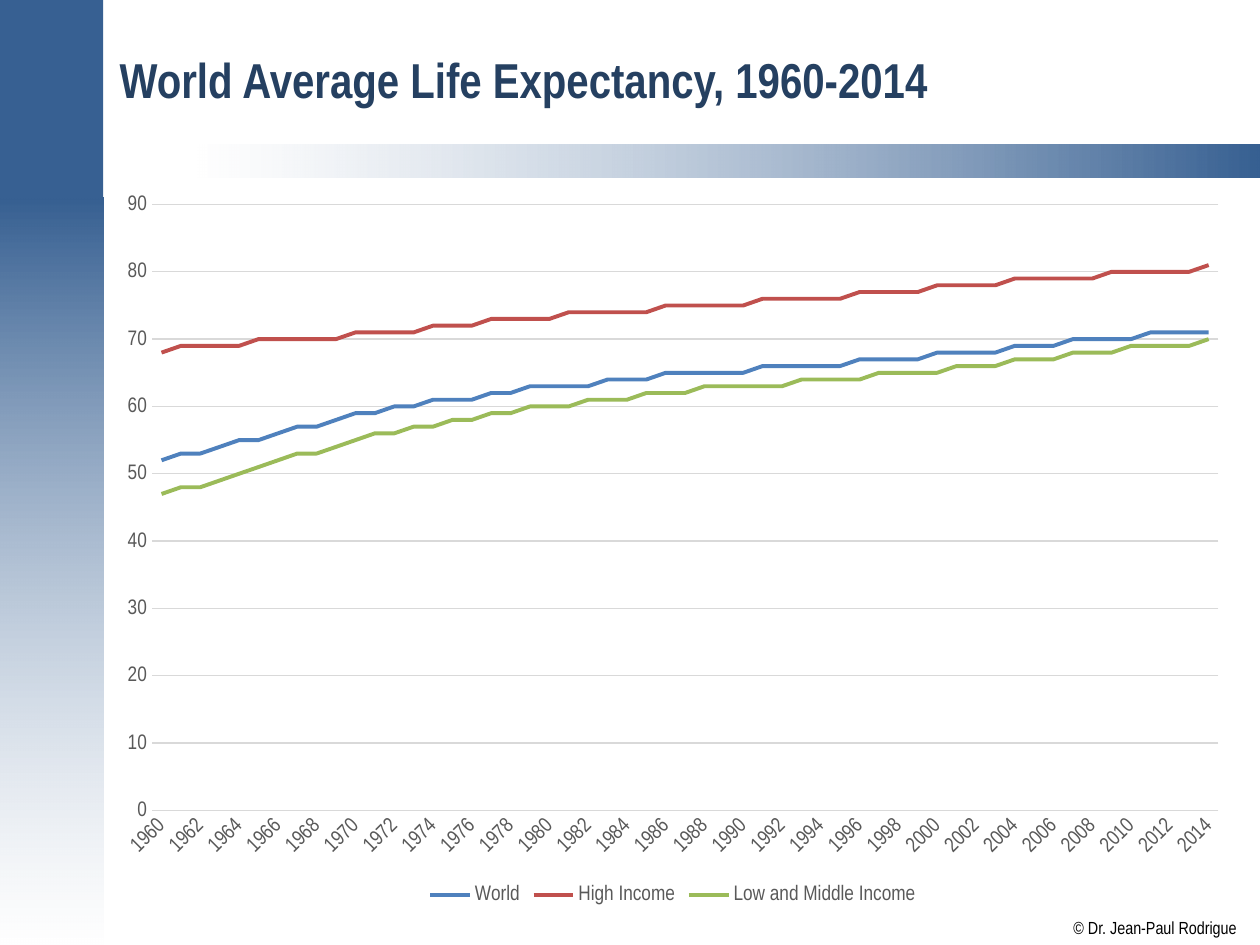
from lxml import etree
from pptx import Presentation
from pptx.chart.data import CategoryChartData
from pptx.dml.color import RGBColor
from pptx.enum.chart import XL_CHART_TYPE, XL_LEGEND_POSITION, XL_TICK_MARK
from pptx.enum.shapes import MSO_SHAPE
from pptx.enum.text import MSO_ANCHOR, MSO_AUTO_SIZE, PP_ALIGN
from pptx.oxml.ns import qn
from pptx.util import Cm, Pt

LINE = XL_CHART_TYPE.LINE
BOTTOM = XL_LEGEND_POSITION.BOTTOM
NO_TICK = XL_TICK_MARK.NONE
RECT = MSO_SHAPE.RECTANGLE
MIDDLE = MSO_ANCHOR.MIDDLE
NO_FIT = MSO_AUTO_SIZE.NONE
LEFT = PP_ALIGN.LEFT

BLUE, WHITE, GREY = "376092", "FFFFFF", "D9D9D9"
TITLE = {"name": "Arial Narrow", "size": Pt(28), "bold": True}
CREDIT = {"name": "Arial Narrow", "size": Pt(10), "bold": False}
LABEL = {"name": "Arial Narrow", "size": Pt(12), "bold": False}


def rgb(value):
    return RGBColor.from_string(value)


def set_font(font, style, color):
    for name, value in style.items():
        setattr(font, name, value)
    font.color.rgb = rgb(color)


prs = Presentation()
prs.slide_width, prs.slide_height = Cm(25.4), Cm(19.05)
s = prs.slides.add_slide(prs.slide_layouts[5])

# Side bar and fading bands: box, gradient angle (counter-clockwise), stops, white opacity
bands = [
    ((-0.03, 3.99, 2.11, 15.06), 270, (BLUE, WHITE), 51),
    ((3.99, 2.92, 21.41, 0.66), 0, (WHITE, BLUE), 50),
    ((-0.03, -0.03, 2.11, 4.02), None, (BLUE,), None),
]
for box, angle, colors, opacity in bands:
    sp = s.shapes.add_shape(RECT, *map(Cm, box))
    sp.shadow.inherit = False
    sp.line.fill.background()
    if angle is None:
        sp.fill.solid()
        sp.fill.fore_color.rgb = rgb(colors[0])
        continue
    sp.fill.gradient()
    sp.fill.gradient_angle = angle
    for stop, position, color in zip(sp.fill.gradient_stops, (0, 1), colors):
        stop.position = position
        stop.color.rgb = rgb(color)
    for clr in sp._element.iter(qn("a:srgbClr")):
        if clr.get("val") == WHITE:
            etree.SubElement(clr, qn("a:alpha"), val=str(opacity * 1000))

# Title
sp = s.shapes.title
sp.left, sp.top, sp.width, sp.height = map(Cm, (2.16, 0.28, 22.81, 2.64))
tf = sp.text_frame
tf.text = "World Average Life Expectancy, 1960-2014"
tf.auto_size = NO_FIT
tf.vertical_anchor = MIDDLE
p = tf.paragraphs[0]
p.alignment = LEFT
set_font(p.runs[0].font, TITLE, "254061")

# Copyright line
sp = s.shapes.add_textbox(Cm(21.64), Cm(18.49), Cm(3.3), Cm(0.43))
tf = sp.text_frame
tf.margin_left = tf.margin_top = tf.margin_right = tf.margin_bottom = 0
tf.word_wrap = False
r = tf.paragraphs[0].add_run()
r.text = "© Dr. Jean-Paul Rodrigue"
set_font(r.font, CREDIT, "000000")

# Life expectancy in years, one value per year
series = [
    ("World", "4F81BD", [
        52, 53, 53, 54, 55, 55, 56, 57, 57, 58,
        59, 59, 60, 60, 61, 61, 61, 62, 62, 63,
        63, 63, 63, 64, 64, 64, 65, 65, 65, 65,
        65, 66, 66, 66, 66, 66, 67, 67, 67, 67,
        68, 68, 68, 68, 69, 69, 69, 70, 70, 70,
        70, 71, 71, 71, 71]),
    ("High Income", "C0504D", [
        68, 69, 69, 69, 69, 70, 70, 70, 70, 70,
        71, 71, 71, 71, 72, 72, 72, 73, 73, 73,
        73, 74, 74, 74, 74, 74, 75, 75, 75, 75,
        75, 76, 76, 76, 76, 76, 77, 77, 77, 77,
        78, 78, 78, 78, 79, 79, 79, 79, 79, 80,
        80, 80, 80, 80, 81]),
    ("Low and Middle Income", "9BBB59", [
        47, 48, 48, 49, 50, 51, 52, 53, 53, 54,
        55, 56, 56, 57, 57, 58, 58, 59, 59, 60,
        60, 60, 61, 61, 61, 62, 62, 62, 63, 63,
        63, 63, 63, 64, 64, 64, 64, 65, 65, 65,
        65, 66, 66, 66, 67, 67, 67, 68, 68, 68,
        69, 69, 69, 69, 70]),
]
data = CategoryChartData(number_format="0")
data.categories = [str(year) for year in range(1960, 2015)]
for name, _, values in series:
    data.add_series(name, values)

box = map(Cm, (2.11, 3.63, 22.91, 14.71))
chart = s.shapes.add_chart(LINE, *box, data).chart
set_font(chart.font, CREDIT, "000000")
chart.has_title = False
chart.has_legend = True
chart.legend.position = BOTTOM
chart.legend.include_in_layout = False
set_font(chart.legend.font, LABEL, "595959")

plot = chart.plots[0]
plot.vary_by_categories = False
for ser, (_, color, _) in zip(plot.series, series):
    ser.smooth = False
    ser.format.line.width = Pt(2.25)
    ser.format.line.color.rgb = rgb(color)

cat_axis, val_axis = chart.category_axis, chart.value_axis
for axis in (cat_axis, val_axis):
    axis.major_tick_mark = axis.minor_tick_mark = NO_TICK
    set_font(axis.tick_labels.font, LABEL, "595959")
val_axis.minimum_scale, val_axis.maximum_scale = 0, 90
val_axis.major_unit = 10
val_axis.format.line.fill.background()
for line in (cat_axis.format.line, val_axis.major_gridlines.format.line):
    line.width = Pt(0.75)
    line.color.rgb = rgb(GREY)
cat_axis._element.find(qn("c:txPr")).find(qn("a:bodyPr")).set("rot", "-2700000")

prs.save("out.pptx")
